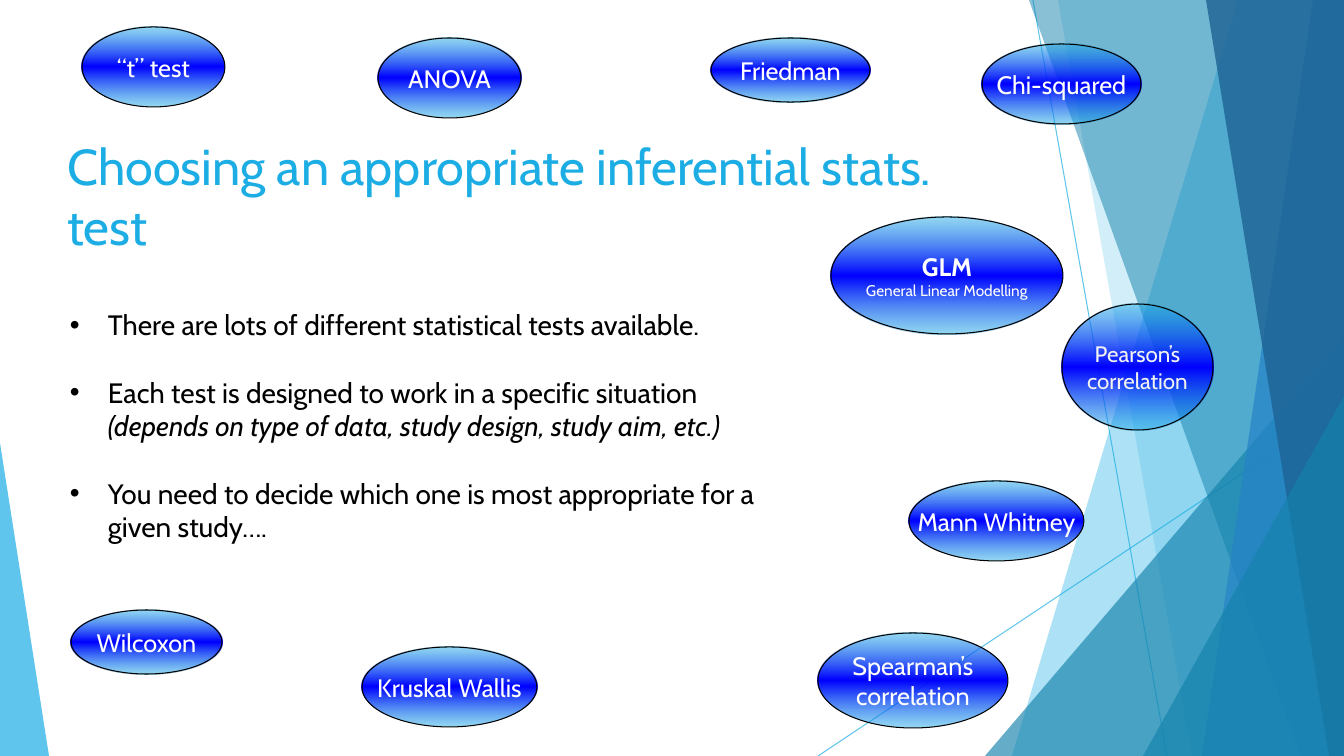
from lxml import etree
from pptx import Presentation, util as u
from pptx.dml.color import RGBColor
from pptx.enum import shapes, text
from pptx.oxml import parse_xml
from pptx.oxml.ns import nsdecls, qn

PX = 914400 / 100.8
W, H = 1344, 756
FONT = "Cabin"
SKY = RGBColor(0x1C, 0xAD, 0xE4)
TEAL = RGBColor(0x14, 0x82, 0xAC)
BLUE = RGBColor(0x26, 0x83, 0xC6)
NAVY = RGBColor(0x1D, 0x62, 0x94)
VIVID = RGBColor(0x00, 0x00, 0xFF)
BLACK = RGBColor(0x00, 0x00, 0x00)
WHITE = RGBColor(0xFF, 0xFF, 0xFF)
PALE = RGBColor(0xF2, 0xF2, 0xF2)

TITLE = "Choosing an appropriate inferential stats. test"
# Each bullet is a list of (text, italic) lines
BULLETS = [
    [("There are lots of different statistical tests available.", False)],
    [("Each test is designed to work in a specific situation", False),
     ("(depends on type of data, study design, study aim, etc.)", True)],
    [("You need to decide which one is most appropriate for a given study….", False)],
]
# Box, text colour, (text, size, bold) lines
TESTS = [
    ((909, 481, 175, 80), WHITE, [("Mann Whitney", 18, False)]),
    ((82, 27, 143, 80), WHITE, [("“t” test", 18, False)]),
    ((1062, 304, 151, 126), PALE, [("Pearson’s", 16, False), ("correlation", 16, False)]),
    ((378, 38, 143, 80), WHITE, [("ANOVA", 18, False)]),
    ((982, 44, 159, 80), WHITE, [("Chi-squared", 18, False)]),
    ((362, 647, 175, 80), WHITE, [("Kruskal Wallis", 18, False)]),
    ((71, 610, 151, 64), WHITE, [("Wilcoxon", 18, False)]),
    ((711, 38, 159, 64), WHITE, [("Friedman", 18, False)]),
    ((818, 633, 190, 95), WHITE, [("Spearman’s", 18, False), ("correlation", 18, False)]),
    ((831, 217, 232, 117), WHITE,
     [("GLM", 18, True), ("General Linear Modelling", 11, False)]),
]
RAYS = [(1033, 0, 1167, H), (W, 406, 818, H)]
# Top-left and bottom-left x of a band that reaches the right edge
BANDS = {
    "wide": (1238, 1012, SKY, 36),
    "light": (1058, 1192, SKY, 20),
    "teal": (1029, 1301, TEAL, 50),
    "blue": (1313, 1202, BLUE, 70),
    "navy": (1206, 1329, NAVY, 80),
}
# Box, apex position, colour, opacity
WEDGES = {
    "large": ((985, 336, 359, 420), 1, TEAL, 66),
    "small": ((1143, 396, 201, 360), 1, TEAL, 66),
    "left": ((0, 443, 49, 313), 0, SKY, 70),
}


def px(*lengths):
    return [u.Emu(round(n * PX)) for n in lengths]


def set_opacity(parent, percent):
    for clr in parent.iter(qn("a:srgbClr")):
        etree.SubElement(clr, qn("a:alpha")).set("val", str(percent * 1000))


def paint(sp, color, opacity):
    sp.shadow.inherit = False
    sp.fill.solid()
    sp.fill.fore_color.rgb = color
    set_opacity(sp.fill._xPr, opacity)
    sp.line.fill.background()


def add_ray(x1, y1, x2, y2):
    ray = s.shapes.add_connector(shapes.MSO_CONNECTOR.STRAIGHT, *px(x1, y1, x2, y2))
    ray.line.color.rgb = SKY
    ray.line.width = u.Pt(0.75)
    spPr = ray._element.spPr
    set_opacity(spPr, 70)
    etree.SubElement(spPr, qn("a:effectLst"))


def add_band(top, bottom, color, opacity):
    builder = s.shapes.build_freeform(top, 0, scale=PX)
    builder.add_line_segments([(W, 0), (W, H), (bottom, H)], close=True)
    paint(builder.convert_to_shape(), color, opacity)


def add_wedge(box, apex, color, opacity):
    sp = s.shapes.add_shape(shapes.MSO_SHAPE.ISOSCELES_TRIANGLE, *px(*box))
    sp.adjustments[0] = apex
    paint(sp, color, opacity)


def add_text(p, words, size=18, color=BLACK, bold=False, italic=False):
    r = p.add_run()
    r.text = words
    r.font.name = FONT
    r.font.size = u.Pt(size)
    r.font.color.rgb = color
    r.font.bold = bold
    r.font.italic = italic


def nth_paragraph(tf, n):
    return tf.add_paragraph() if n else tf.paragraphs[0]


def add_bullet(p):
    pPr = p._p.get_or_add_pPr()
    indent = round(38 * PX)
    pPr.set("marL", str(indent))
    pPr.set("indent", str(-indent))
    etree.SubElement(pPr, qn("a:buFont")).set("typeface", "Arial")
    etree.SubElement(pPr, qn("a:buChar")).set("char", "•")


def fill_gradient(sp):
    """Vertical fade from translucent sky to vivid blue and back."""
    edge = f'<a:srgbClr val="{SKY}"><a:alpha val="46000"/></a:srgbClr>'
    middle = f'<a:srgbClr val="{VIVID}"/>'
    stops = "".join(f'<a:gs pos="{pos}">{clr}</a:gs>' for pos, clr in
                    ((0, edge), (50000, middle), (100000, edge)))
    grad = parse_xml(f'<a:gradFill {nsdecls("a")} rotWithShape="1"><a:gsLst>{stops}</a:gsLst>'
                     '<a:lin ang="5400000" scaled="1"/></a:gradFill>')
    sp._element.spPr.find(qn("a:prstGeom")).addnext(grad)


def add_test(box, color, lines):
    sp = s.shapes.add_shape(shapes.MSO_SHAPE.OVAL, *px(*box))
    sp.shadow.inherit = False
    fill_gradient(sp)
    sp.line.color.rgb = BLACK
    sp.line.width = u.Pt(0.75)
    tf = sp.text_frame
    tf.word_wrap = False
    tf.vertical_anchor = text.MSO_ANCHOR.MIDDLE
    for n, (words, size, bold) in enumerate(lines):
        p = nth_paragraph(tf, n)
        p.alignment = text.PP_ALIGN.CENTER
        add_text(p, words, size=size, color=color, bold=bold)


prs = Presentation()
prs.slide_width, prs.slide_height = px(W, H)
s = prs.slides.add_slide(prs.slide_layouts[5])

for ray in RAYS:
    add_ray(*ray)
for name in ("wide", "light"):
    add_band(*BANDS[name])
add_wedge(*WEDGES["large"])
for name in ("teal", "blue", "navy"):
    add_band(*BANDS[name])
for name in ("small", "left"):
    add_wedge(*WEDGES[name])

title = s.shapes.title
title.left, title.top, title.width, title.height = px(57, 130, 948, 145)
tf = title.text_frame
tf.word_wrap = True
tf.auto_size = text.MSO_AUTO_SIZE.NONE
tf.vertical_anchor = text.MSO_ANCHOR.TOP
tf.paragraphs[0].alignment = text.PP_ALIGN.LEFT
add_text(tf.paragraphs[0], TITLE, size=36, color=SKY)

tf = s.shapes.add_textbox(*px(60, 303, 748, 281)).text_frame
tf.word_wrap = True
tf.auto_size = text.MSO_AUTO_SIZE.SHAPE_TO_FIT_TEXT
for n, lines in enumerate(BULLETS):
    p = nth_paragraph(tf, n)
    if n:
        p.space_before = u.Pt(24)
    add_bullet(p)
    for i, (words, italic) in enumerate(lines):
        if i:
            p.add_line_break()
        add_text(p, words, size=20, italic=italic)

for test in TESTS:
    add_test(*test)

prs.save("out.pptx")
